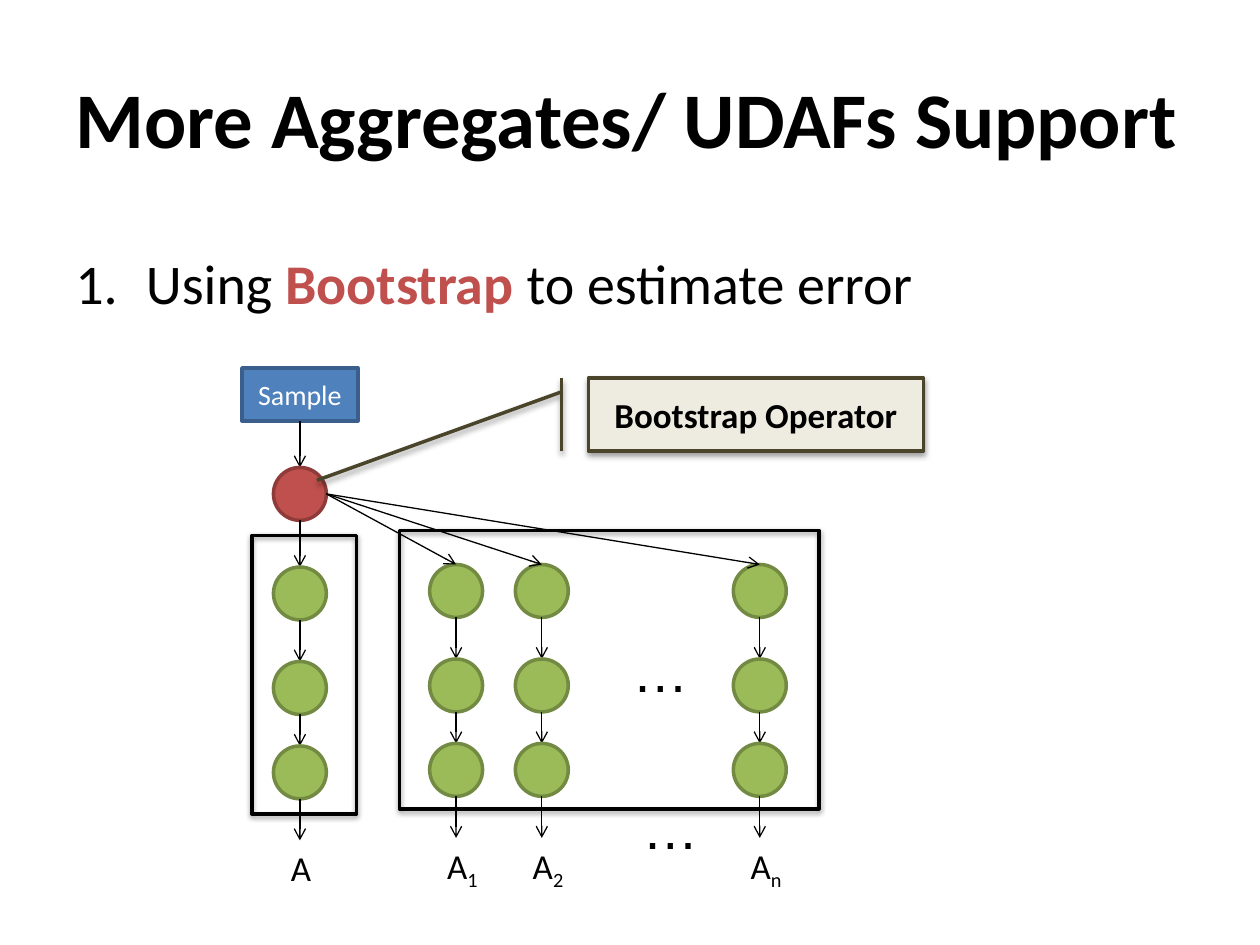
from pptx import Presentation
from pptx.dml.color import RGBColor
from pptx.enum.shapes import MSO_CONNECTOR, MSO_SHAPE
from pptx.enum.text import MSO_ANCHOR, MSO_AUTO_SIZE, PP_ALIGN
from pptx.oxml.ns import qn
from pptx.util import Inches, Pt
from lxml.etree import SubElement

# Content
TITLE = "More Aggregates/ UDAFs Support"
POINT = [("Using ", False), ("Bootstrap ", True), ("to estimate error", False)]
SAMPLE = "Sample"
OPERATOR = "Bootstrap Operator"
# Chains: centre x, top y, result letter, subscript
CHAINS = [
    (2.38, 4.5, "A", ""),
    (3.62, 4.48, "A", "1"),
    (4.3, 4.48, "A", "2"),
    (6.03, 4.48, "A", "n"),
]
ELLIPSES = [(4.92, 5), (5, 6.25)]
FRAMES = [(3.17, 4.21, 3.33, 2.21), (2, 4.25, 0.83, 2.21)]

# Measures and colours
NODE = 0.42
NODE_OFFSETS = [0, 0.75, 1.42]
RESULT_OFFSET = 2.17
OPERATOR_TOP = 3.71
BLACK, RED = "000000", "C0504D"

presentation = Presentation()
presentation.slide_width, presentation.slide_height = Inches(10), Inches(7.5)
slide = presentation.slides.add_slide(presentation.slide_layouts[6])
shapes = slide.shapes


def color(value):
    return RGBColor.from_string(value)


def format_run(run, size, fill=BLACK, bold=False, font="Calibri"):
    run.font.name, run.font.size, run.font.bold = font, Pt(size), bold
    run.font.color.rgb = color(fill)


def add_text(box, runs, size, wrap=True, anchor=MSO_ANCHOR.TOP, font="Calibri"):
    """Add a text box of one paragraph; runs are (text, colour, bold)."""
    frame = shapes.add_textbox(*map(Inches, box)).text_frame
    frame.word_wrap, frame.vertical_anchor = wrap, anchor
    if not wrap:
        frame.auto_size = MSO_AUTO_SIZE.SHAPE_TO_FIT_TEXT
    paragraph = frame.paragraphs[0]
    for text, fill, bold in runs:
        run = paragraph.add_run()
        run.text = text
        format_run(run, size, fill, bold, font)
    return paragraph


def add_shape(kind, box, fill, line):
    shape = shapes.add_shape(kind, *map(Inches, box))
    shape.shadow.inherit = False
    if fill:
        shape.fill.solid()
        shape.fill.fore_color.rgb = color(fill)
    else:
        shape.fill.background()
    shape.line.color.rgb, shape.line.width = color(line), Pt(2)
    return shape


def add_node(center_x, top, fill="9BBB59", line="738A42"):
    add_shape(MSO_SHAPE.OVAL, (center_x - NODE / 2, top, NODE, NODE), fill, line)


def add_label(shape, text, size, fill, bold=False):
    frame = shape.text_frame
    frame.text = text
    frame.vertical_anchor = MSO_ANCHOR.MIDDLE
    frame.paragraphs[0].alignment = PP_ALIGN.CENTER
    format_run(frame.paragraphs[0].runs[0], size, fill, bold)


def add_shadow(shape):
    effects = shape._element.spPr.find(qn("a:effectLst"))
    shadow = SubElement(effects, qn("a:outerShdw"), blurRad="40000", dist="20000",
                        dir="5400000", rotWithShape="0")
    shade = SubElement(shadow, qn("a:srgbClr"), val=BLACK)
    SubElement(shade, qn("a:alpha"), val="38000")


def add_arrow(x1, y1, x2, y2):
    arrow = shapes.add_connector(MSO_CONNECTOR.STRAIGHT, *map(Inches, (x1, y1, x2, y2)))
    arrow.line.color.rgb, arrow.line.width = color(BLACK), Pt(0.75)
    SubElement(arrow.line._get_or_add_ln(), qn("a:tailEnd"), type="arrow")
    SubElement(arrow._element.spPr, qn("a:effectLst"))
    return arrow


# Numbered point and title
point = add_text((0.5, 1.92, 9, 5.08),
                 [(text, RED if strong else BLACK, strong) for text, strong in POINT], 32)
properties = point._p.get_or_add_pPr()
properties.set("marL", str(Inches(0.56)))
properties.set("indent", str(Inches(-0.56)))
SubElement(properties, qn("a:buFont"), typeface="+mj-lt")
SubElement(properties, qn("a:buAutoNum"), type="arabicPeriod")
add_text((0.5, 0.3, 9.33, 1.25), [(TITLE, BLACK, True)], 45, anchor=MSO_ANCHOR.MIDDLE)

# Sample feeding the operator node
main_x, main_top = CHAINS[0][:2]
sample = add_shape(MSO_SHAPE.RECTANGLE, (1.92, 2.92, 0.92, 0.42), "4F81BD", "3A5F8C")
add_label(sample, SAMPLE, 16, "FFFFFF")
add_arrow(main_x, 3.34, main_x, OPERATOR_TOP).begin_connect(sample, 2)
add_node(main_x, OPERATOR_TOP, RED, "8E3B39")
add_arrow(main_x, OPERATOR_TOP + NODE, main_x, main_top)

# Chains of nodes, each ending in a result
for x, top, letter, subscript in CHAINS:
    stops = [top + offset for offset in NODE_OFFSETS + [RESULT_OFFSET]]
    for node_top, next_top in zip(stops, stops[1:]):
        add_node(x, node_top)
        add_arrow(x, node_top + NODE, x, next_top)
    runs = [(text, BLACK, False) for text in (letter, subscript) if text]
    width = 0.46 if subscript else 0.37
    result = add_text((x - 0.17, stops[-1], width, 0.44), runs, 20, wrap=False)
    for run in result.runs[1:]:
        run.font._element.set("baseline", "-25000")

# Fan from the operator node to the resampled chains
for x, top, *_ in CHAINS[1:]:
    add_arrow(main_x + NODE / 2, OPERATOR_TOP + NODE / 2, x, top)

for left, top in ELLIPSES:
    add_text((left, top, 0.65, 0.64), [("…", BLACK, False)], 32, wrap=False, font="Arial")

# Frames around the chains
for box in FRAMES:
    add_shadow(add_shape(MSO_SHAPE.RECTANGLE, box, None, BLACK))

# Callout naming the operator node
callout = add_shape(MSO_SHAPE.LINE_CALLOUT_1_BORDER_AND_ACCENT_BAR,
                    (4.67, 3, 2.66, 0.58), "EEECE1", "4A452A")
for index, value in enumerate((0.19, -0.08, 1.4, -0.81)):
    callout.adjustments[index] = value
add_shadow(callout)
add_label(callout, OPERATOR, 20, BLACK, bold=True)

presentation.save("out.pptx")
